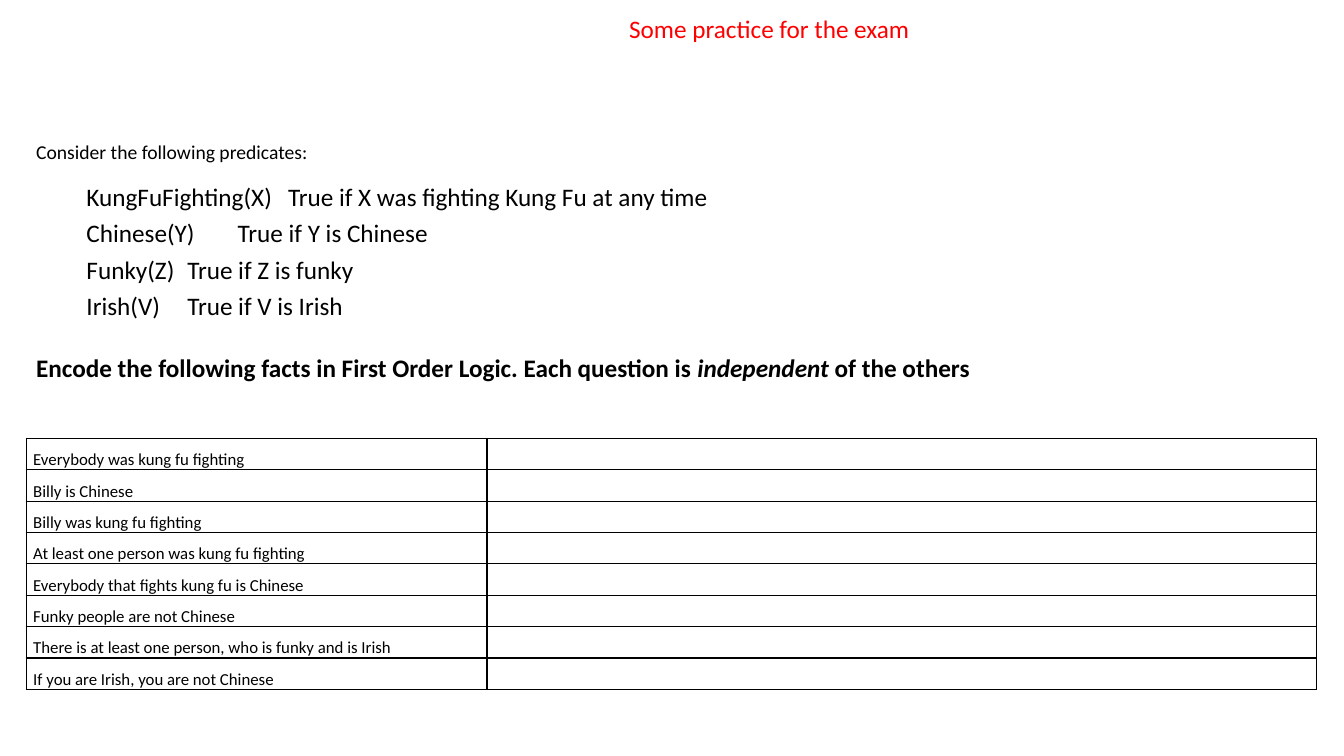
"""Build a slide of practice questions on first order logic."""
from dataclasses import dataclass

from lxml import etree
from pptx import Presentation
from pptx import util as u
from pptx.dml.color import RGBColor
from pptx.enum import text
from pptx.oxml import ns


@dataclass(frozen=True)
class Theme:
    """Colours, font and type sizes of the slide."""
    font: str = "Calibri"
    ink: str = "000000"
    head: str = "FF0000"
    large: int = 18
    mid: int = 14
    small: int = 12


THEME = Theme()

TERMS = [
    ("KungFuFighting(X)", "True if X was fighting Kung Fu at any time"),
    ("Chinese(Y)", "True if Y is Chinese"),
    ("Funky(Z)", "True if Z is funky"),
    ("Irish(V)", "True if V is Irish"),
]

FACTS = [
    "Everybody was kung fu fighting",
    "Billy is Chinese",
    "Billy was kung fu fighting",
    "At least one person was kung fu fighting",
    "Everybody that fights kung fu is Chinese",
    "Funky people are not Chinese",
    "There is at least one person, who is funky and is Irish",
    "If you are Irish, you are not Chinese",
]


def style(para, size, color=THEME.ink, bold=False):
    """Set the font of a whole paragraph."""
    font = para.font
    font.name, font.size, font.bold = THEME.font, u.Pt(size), bold
    font.color.rgb = RGBColor.from_string(color)


def add_head(slide, left, top, width, height):
    """Place and format the slide title."""
    title = slide.shapes.title
    title.left, title.top, title.width, title.height = map(
        u.Inches, (left, top, width, height))
    frame = title.text_frame
    frame.text = "Some practice for the exam"
    frame.word_wrap = False
    frame.auto_size = text.MSO_AUTO_SIZE.NONE
    frame.vertical_anchor = text.MSO_ANCHOR.TOP
    para = frame.paragraphs[0]
    para.alignment = text.PP_ALIGN.LEFT
    style(para, THEME.large, THEME.head)


def indent(para, first, stop):
    """Give a paragraph a first line indent and one tab stop."""
    props = para._p.get_or_add_pPr()
    props.set("marL", "0")
    props.set("indent", str(u.Inches(first)))
    tabs = etree.Element(ns.qn("a:tabLst"))
    etree.SubElement(tabs, ns.qn("a:tab"), pos=str(u.Inches(stop)), algn="l")
    props.insert_element_before(tabs, "a:defRPr", "a:extLst")


def add_terms(slide, left, top, width, height):
    """Write the predicates and the task below them."""
    box = slide.shapes.add_textbox(*map(u.Inches, (left, top, width, height)))
    frame = box.text_frame
    frame.word_wrap = True
    frame.auto_size = text.MSO_AUTO_SIZE.SHAPE_TO_FIT_TEXT
    intro = frame.paragraphs[0]
    intro.text = "Consider the following predicates:"
    intro.line_spacing, intro.space_after = 1.15, u.Pt(10)
    style(intro, THEME.mid)
    for name, sense in TERMS:
        para = frame.add_paragraph()
        para.text = f"{name}\t{sense}"
        para.line_spacing, para.space_after = 1.15, u.Pt(1)
        style(para, THEME.large)
        indent(para, 0.5, 4)
    task = frame.add_paragraph()
    task.space_before = u.Pt(22)
    style(task, THEME.large, bold=True)
    for part, slant in (
        ("Encode the following facts in First Order Logic. Each question is ", False),
        ("independent", True),
        (" of the others", False),
    ):
        run = task.add_run()
        run.text, run.font.italic = part, slant


def add_rules(cell):
    """Draw a thin line on each side of a cell."""
    props = cell._tc.get_or_add_tcPr()
    for spot, side in enumerate(("lnL", "lnR", "lnT", "lnB")):
        line = etree.Element(ns.qn(f"a:{side}"), w=str(u.Pt(1)))
        fill = etree.SubElement(line, ns.qn("a:solidFill"))
        etree.SubElement(fill, ns.qn("a:srgbClr"), val=THEME.ink)
        props.insert(spot, line)


def add_facts(slide, left, top, width, height):
    """Lay out the facts with an empty answer cell beside each."""
    table = slide.shapes.add_table(
        len(FACTS), 2, *map(u.Inches, (left, top, width, height))).table
    table.first_row = table.horz_banding = False
    first = 4.57
    table.columns[0].width = u.Inches(first)
    table.columns[1].width = u.Inches(width - first)
    for row, fact in zip(table.rows, FACTS):
        row.height = u.Inches(height / len(FACTS))
        for cell, words in zip(row.cells, (fact, "")):
            cell.margin_left = cell.margin_right = u.Inches(0.07)
            cell.margin_top = cell.margin_bottom = 0
            cell.fill.background()
            add_rules(cell)
            para = cell.text_frame.paragraphs[0]
            style(para, THEME.small)
            if words:
                para.text = words
                para.line_spacing = 1.55


def main():
    """Build and save the slide."""
    deck = Presentation()
    deck.slide_width, deck.slide_height = u.Inches(13.33), u.Inches(7.5)
    slide = deck.slides.add_slide(deck.slide_layouts.get_by_name("Title Only"))
    add_head(slide, 6.14, 0.08, 3.01, 0.4)
    add_terms(slide, 0.26, 1.3, 10.96, 2.57)
    add_facts(slide, 0.26, 4.35, 12.8, 2.49)
    deck.save("out.pptx")


if __name__ == "__main__":
    main()
